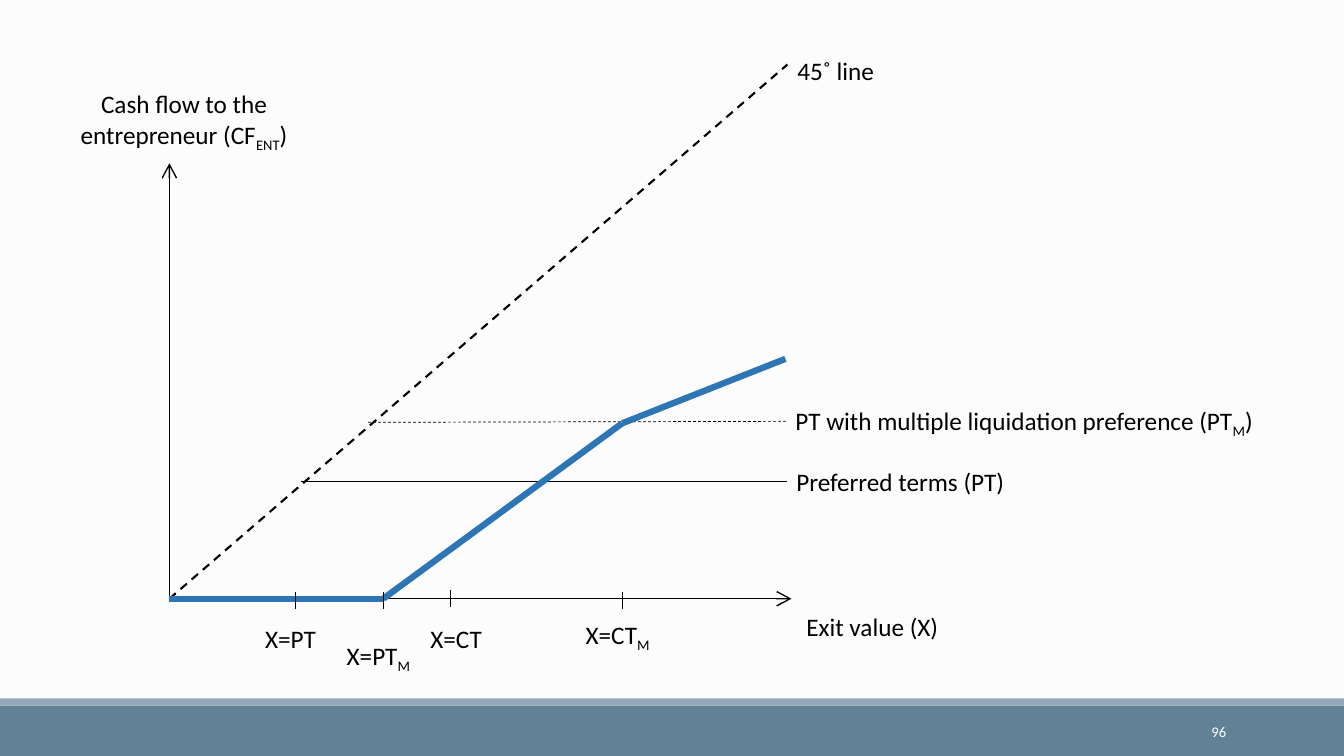
from lxml import etree
from pptx import Presentation
from pptx import util as u
from pptx.dml.color import RGBColor
from pptx.enum import dml, shapes, text
from pptx.oxml import ns

COLORS = {"background": "FCFCFC", "bar": "618197", "strip": "92A9B9",
          "ink": "000000", "payoff": "2E75B6", "page": "FFFFFF"}
FONT = "Calibri"
ORIGIN = (1.68, 5.94)


def color(name):
    """Return the named colour."""
    return RGBColor.from_string(COLORS[name])


def add_band(slide, box, fill):
    """Draw a plain filled rectangle."""
    band = slide.shapes.add_shape(shapes.MSO_SHAPE.RECTANGLE, *map(u.Inches, box))
    band.shadow.inherit = False
    band.fill.solid()
    band.fill.fore_color.rgb = color(fill)
    band.line.fill.background()


def add_line(slide, start, end, width, ink="ink", dash=None, arrow=False):
    """Draw a straight line, with an optional arrowhead at its end."""
    line = slide.shapes.add_connector(
        shapes.MSO_CONNECTOR.STRAIGHT, *map(u.Inches, (*start, *end)))
    line.line.width = u.Pt(width)
    line.line.color.rgb = color(ink)
    if dash:
        line.line.dash_style = dash
    if arrow:
        etree.SubElement(line.line._get_or_add_ln(), ns.qn("a:tailEnd"),
                         type="arrow", w="lg", len="lg")
    etree.SubElement(line._element.spPr, ns.qn("a:effectLst"))


def add_text(slide, box, *words, size=18, ink="ink", align=text.PP_ALIGN.LEFT,
             anchor=text.MSO_ANCHOR.TOP):
    """Place one paragraph whose every second run is a subscript."""
    shape = slide.shapes.add_textbox(*map(u.Inches, box))
    frame = shape.text_frame
    frame.word_wrap = True
    frame.vertical_anchor = anchor
    paragraph = frame.paragraphs[0]
    paragraph.alignment = align
    for index, word in enumerate(words):
        run = paragraph.add_run()
        run.text = word
        run.font.name = FONT
        run.font.size = u.Pt(size)
        run.font.color.rgb = color(ink)
        if index % 2:
            run._r.get_or_add_rPr().set("baseline", "-25000")


def add_footer(slide, left, top, width, height):
    """Draw the footer bands and the page number."""
    strip = 0.07
    add_band(slide, (left, top + strip, width, height - strip), "bar")
    add_band(slide, (left, top, width, strip), "strip")
    add_text(slide, (left + width - 2.5, top + 0.13, 1.43, 0.4), "96", size=10.5,
             ink="page", align=text.PP_ALIGN.RIGHT, anchor=text.MSO_ANCHOR.MIDDLE)


def add_axes(slide, left, base, width, height):
    """Draw both axes and their titles."""
    add_line(slide, (left, base), (left, base - height), 1, arrow=True)
    add_line(slide, (left, base), (left + width, base), 1, arrow=True)
    add_text(slide, (left - 1.15, base - height - 0.79, 2.59, 0.71),
             "Cash flow to the entrepreneur (CF", "ENT", ")",
             align=text.PP_ALIGN.CENTER)
    add_text(slide, (left + width + 0.05, base + 0.08, 2.2, 0.4), "Exit value (X)")


def add_reference_lines(slide, left, base, width):
    """Draw the 45 degree line and the two preference levels."""
    right = left + width
    dash = dml.MSO_LINE.DASH
    add_line(slide, (left, base), (right, base - 5.3), 1.5, dash=dash)
    add_text(slide, (right, base - 5.44, 3.28, 0.4), "45˚ line")
    add_line(slide, (2.99, base - 1.16), (right, base - 1.16), 0.5)
    add_text(slide, (right - 0.01, base - 1.36, 2.68, 0.4), "Preferred terms (PT)")
    add_line(slide, (3.65, base - 1.75), (right, base - 1.76), 0.5, dash=dash)
    add_text(slide, (right - 0.02, base - 1.97, 4.82, 0.4),
             "PT with multiple liquidation preference (PT", "M", ")")


def add_payoff(slide, left, base):
    """Draw the entrepreneur's payoff as joined segments."""
    points = [(left, base), (3.8, base), (6.17, base - 1.74), (7.79, base - 2.38)]
    for start, end in zip(points, points[1:]):
        add_line(slide, start, end, 4.5, "payoff")


def add_ticks(slide, base):
    """Mark and label the exit values on the horizontal axis."""
    ticks = [(2.93, 0.1, 2.53, 0.19, 0.81, ("X=PT",)),
             (3.8, 0.1, 3.34, 0.36, 0.93, ("X=PT", "M")),
             (4.47, 0.08, 4.17, 0.19, 0.78, ("X=CT",)),
             (6.17, 0.1, 5.71, 0.15, 0.93, ("X=CT", "M"))]
    for x, drop, label_left, label_drop, width, words in ticks:
        add_line(slide, (x, base + drop), (x, base + drop - 0.17), 0.5)
        add_text(slide, (label_left, base + label_drop, width, 0.4), *words)


def main():
    """Build and save the slide."""
    presentation = Presentation()
    presentation.slide_width = u.Inches(13.33)
    presentation.slide_height = u.Inches(7.5)
    slide = presentation.slides.add_slide(presentation.slide_layouts[6])
    slide.background.fill.solid()
    slide.background.fill.fore_color.rgb = color("background")
    add_footer(slide, 0, 6.93, 13.33, 0.57)
    add_axes(slide, *ORIGIN, 6.17, 4.32)
    add_reference_lines(slide, *ORIGIN, 6.13)
    add_payoff(slide, *ORIGIN)
    add_ticks(slide, ORIGIN[1])
    presentation.save("out.pptx")


if __name__ == "__main__":
    main()
